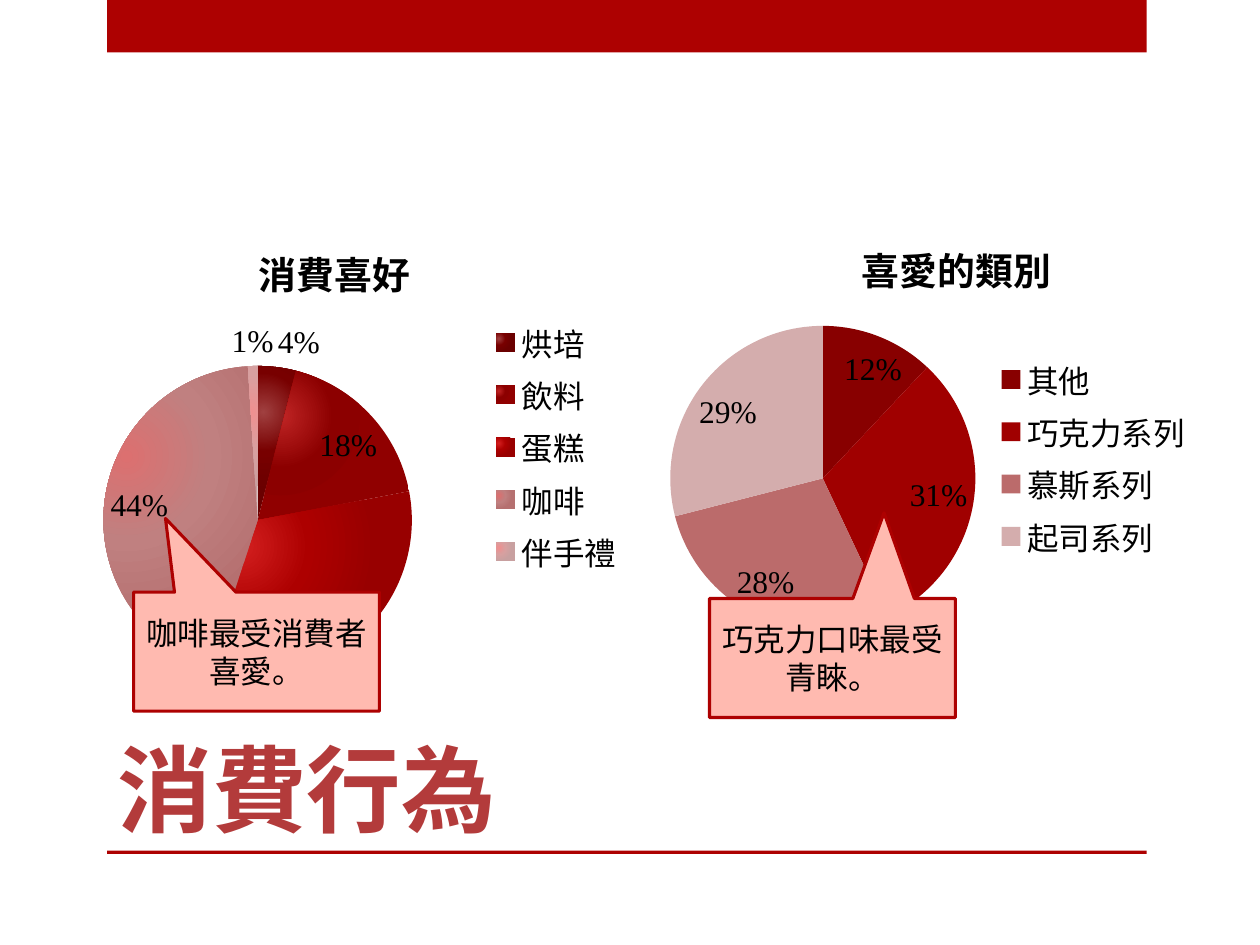
from lxml import etree
from pptx import Presentation
from pptx.chart.data import CategoryChartData
from pptx.dml.color import RGBColor
from pptx.enum.chart import XL_CHART_TYPE, XL_LABEL_POSITION, XL_LEGEND_POSITION
from pptx.enum.shapes import MSO_SHAPE
from pptx.enum.text import MSO_ANCHOR, PP_ALIGN
from pptx.oxml import parse_xml
from pptx.oxml.ns import nsdecls, qn
from pptx.util import Pt

PIE = XL_CHART_TYPE.PIE
BEST_FIT = XL_LABEL_POSITION.BEST_FIT
LEGEND_RIGHT = XL_LEGEND_POSITION.RIGHT
RECTANGLE = MSO_SHAPE.RECTANGLE
CALLOUT = MSO_SHAPE.RECTANGULAR_CALLOUT
MIDDLE, BOTTOM = MSO_ANCHOR.MIDDLE, MSO_ANCHOR.BOTTOM
LEFT, CENTER = PP_ALIGN.LEFT, PP_ALIGN.CENTER

RED, PINK, BLACK = "AD0101", "FFBAB0", "000000"
CHART_FONT, BODY_FONT, TITLE_FONT = "Times New Roman", "Noto Sans CJK SC", "Roboto Condensed"


def color(hex_code):
    return RGBColor.from_string(hex_code)


def write(shape, text, *, size, font, ink=BLACK, bold=False, align=LEFT, anchor=MIDDLE):
    frame = shape.text_frame
    frame.word_wrap = True
    frame.vertical_anchor = anchor
    para = frame.paragraphs[0]
    para.alignment = align
    span = para.add_run()
    span.text = text
    span.font.size = Pt(size)
    span.font.name = font
    span.font.bold = bold
    span.font.color.rgb = color(ink)


def add_box(page, kind, bounds, fill, line=None):
    box = page.shapes.add_shape(kind, *map(Pt, bounds))
    box.shadow.inherit = False
    box.fill.solid()
    box.fill.fore_color.rgb = color(fill)
    if line:
        box.line.color.rgb = color(line)
        box.line.width = Pt(1.75)
    else:
        box.line.fill.background()
    return box


def add_callout(page, left, top, tip, text):
    """Tip is the pointer's offset from the centre, as shares of the box size."""
    box = add_box(page, CALLOUT, (left, top, 140.5, 68), PINK, RED)
    box.adjustments[0], box.adjustments[1] = tip
    write(box, text, size=18, font=BODY_FONT, align=CENTER)


def set_layout(parent, index, **shares):
    """Place a chart part by hand, in shares of the chart's size."""
    for old in parent.findall(qn("c:layout")):
        parent.remove(old)
    layout = etree.Element(qn("c:layout"))
    manual = etree.SubElement(layout, qn("c:manualLayout"))
    if "w" in shares:
        etree.SubElement(manual, qn("c:layoutTarget"), val="inner")
    for axis in ("x", "y"):
        etree.SubElement(manual, qn(f"c:{axis}Mode"), val="edge")
    for name, share in shares.items():
        etree.SubElement(manual, qn(f"c:{name}"), val=str(share))
    parent.insert(index, layout)


def fill_slice(point, colors):
    """Fill with one colour, or with a radial gradient from the first colour outwards."""
    point.format.fill.solid()
    point.format.fill.fore_color.rgb = color(colors[0])
    if len(colors) == 1:
        return
    step = 100000 // (len(colors) - 1)
    stops = "".join(
        f'<a:gs pos="{step * i}"><a:srgbClr val="{code}"/></a:gs>'
        for i, code in enumerate(colors)
    )
    gradient = parse_xml(
        f'<a:gradFill {nsdecls("a")} rotWithShape="1"><a:gsLst>{stops}</a:gsLst>'
        '<a:path path="circle"><a:fillToRect l="15000" t="30000" r="85000" b="70000"/>'
        "</a:path></a:gradFill>"
    )
    solid = next(point.format.fill._xPr.iter(qn("a:solidFill")))
    solid.getparent().replace(solid, gradient)


def add_pie(page, bounds, name, slices, title_at, plot_at):
    """Slices are (category, value, colours) rows."""
    data = CategoryChartData()
    data.categories = [category for category, _, _ in slices]
    data.add_series(name, [value for _, value, _ in slices])
    chart = page.shapes.add_chart(PIE, *map(Pt, bounds), data).chart
    chart.font.size = Pt(18)
    chart.font.name = CHART_FONT
    chart.font.color.rgb = color(BLACK)

    chart.has_title = True
    chart.chart_title.include_in_layout = False
    span = chart.chart_title.text_frame.paragraphs[0].add_run()
    span.text = name
    span.font.size = Pt(21.6)
    span.font.bold = True
    x, y = title_at
    set_layout(chart.element.find(".//" + qn("c:title")), 1, x=x, y=y)

    chart.has_legend = True
    chart.legend.position = LEGEND_RIGHT
    chart.legend.include_in_layout = False

    plot = chart.plots[0]
    plot.vary_by_categories = True
    plot.has_data_labels = True
    labels = plot.data_labels
    labels.show_percentage = True
    labels.show_value = False
    labels.number_format = "0%"
    labels.number_format_is_linked = False
    labels.position = BEST_FIT
    for i, (_, _, colors) in enumerate(slices):
        fill_slice(plot.series[0].points[i], colors)
    x, y, w, h = plot_at
    set_layout(chart.element.find(".//" + qn("c:plotArea")), 0, x=x, y=y, w=w, h=h)


def add_title(page, text):
    title = page.shapes.title
    title.left, title.top, title.width, title.height = map(Pt, (60, 400.5, 534, 85.5))
    write(title, text, size=54, font=TITLE_FONT, ink="B33B3B", bold=True, anchor=BOTTOM)


def main():
    deck = Presentation()
    deck.slide_width, deck.slide_height = Pt(720), Pt(540)
    page = deck.slides.add_slide(deck.slide_layouts[5])

    for top, height in ((0, 30), (486, 2)):
        add_box(page, RECTANGLE, (61.2, top, 594, height), RED)
    add_title(page, "消費行為")

    preferences = [
        ("烘培", 4, ("A04040", "780000", "6A0000")),
        ("飲料", 18, ("C02525", "8C0000", "900000")),
        ("蛋糕", 33, ("D42020", "AD0000", "980000")),
        ("咖啡", 44, ("DC7070", "C08080", "B57070")),
        ("伴手禮", 1, ("F09090", "D8A0A0", "C8A0A0")),
    ]
    add_pie(page, (25.2, 116.6, 339, 278), "消費喜好", preferences,
            (0.35, 0.06), (0.1, 0.33, 0.52, 0.64))
    add_callout(page, 76.3, 338.4, (-0.37, -1.12), "咖啡最受消費者喜愛。")

    flavours = [
        ("其他", 12, ("880000",)),
        ("巧克力系列", 31, ("A00000",)),
        ("慕斯系列", 28, ("BB6B6B",)),
        ("起司系列", 29, ("D4ADAD",)),
    ]
    add_pie(page, (360, 94.3, 329, 334.8), "喜愛的類別", flavours,
            (0.39, 0.11), (0.07, 0.15, 0.53, 0.77))
    add_callout(page, 405.4, 342, (0.21, -1.22), "巧克力口味最受青睞。")

    deck.save("out.pptx")


if __name__ == "__main__":
    main()
